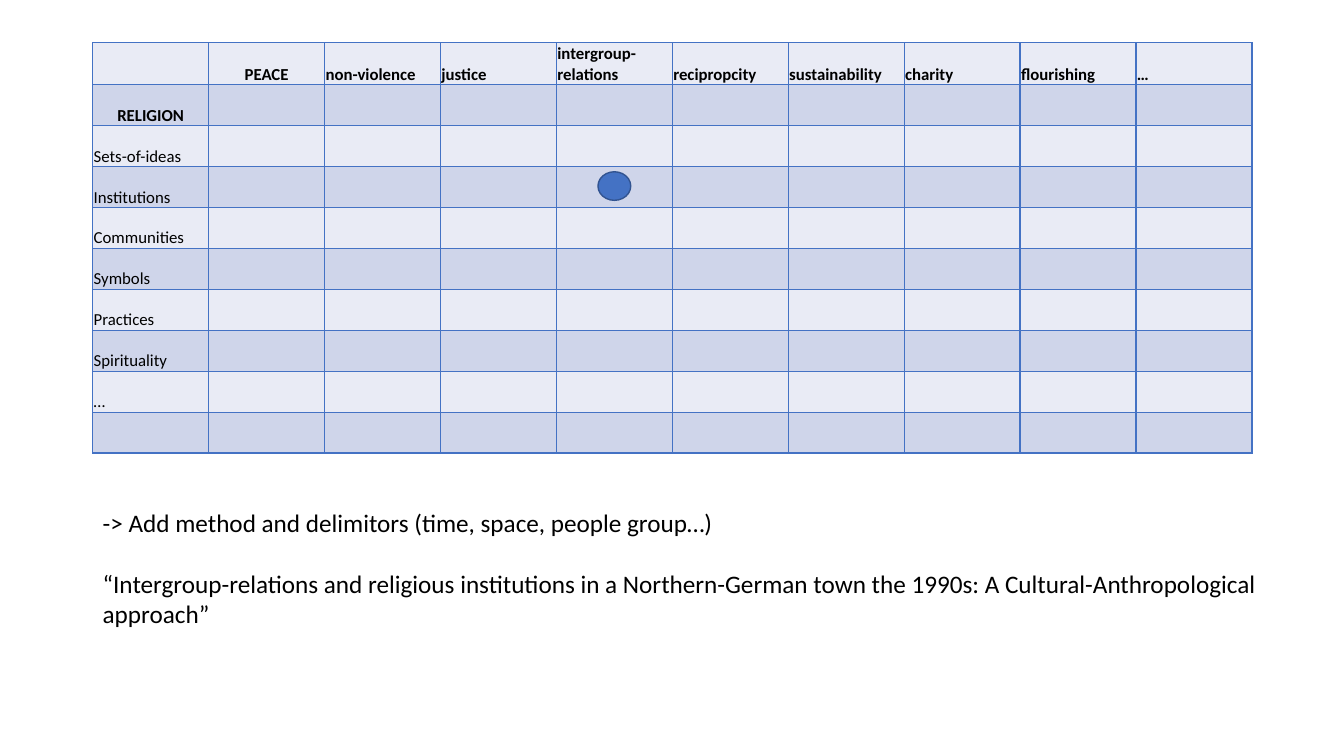
import pptx
import pptx.util
import pptx.dml.color
import pptx.enum.shapes
import pptx.enum.text
import pptx.oxml

Pt = pptx.util.Pt
Align = pptx.enum.text.PP_ALIGN

themes = ["PEACE", "non-violence", "justice", "intergroup-relations", "recipropcity",
          "sustainability", "charity", "flourishing", "…"]
facets = ["RELIGION", "Sets-of-ideas", "Institutions", "Communities", "Symbols",
          "Practices", "Spirituality", "…", ""]
titles = ("PEACE", "RELIGION")
notes = [
    ("-> Add method and delimitors (time, space, people group…)", 0),
    ("“Intergroup-relations and religious institutions in a Northern-German town "
     "the 1990s: A Cultural-Anthropological approach”", 22),
]
colors = {"pale": "E9EBF5", "band": "CFD5EA", "blue": "4472C4", "edge": "325491", "ink": "000000"}
font = "Calibri"
left, top, wide, high = 66.24, 30.6, 82.8, 29.23
mark = (3, 4)
dot_w, dot_h = 23.4, 20.4


def rgb(name):
    return pptx.dml.color.RGBColor.from_string(colors[name])


def write(para, text, size, bold=False):
    run = para.add_run()
    run.text = text
    run.font.name = font
    run.font.size = Pt(size)
    run.font.bold = bold
    run.font.color.rgb = rgb("ink")


def border(cell):
    props = cell._tc.get_or_add_tcPr()
    for side in "LRTB":
        props.append(pptx.oxml.parse_xml(
            f'<a:ln{side} xmlns:a="http://schemas.openxmlformats.org/drawingml/2006/main" w="12700">'
            f'<a:solidFill><a:srgbClr val="{colors["blue"]}"/></a:solidFill></a:ln{side}>'))


def fill_cell(cell, text, row):
    border(cell)
    cell.fill.solid()
    cell.fill.fore_color.rgb = rgb("band" if row % 2 else "pale")
    cell.margin_left = cell.margin_right = cell.margin_top = Pt(0.7)
    cell.margin_bottom = Pt(0)
    cell.vertical_anchor = pptx.enum.text.MSO_ANCHOR.BOTTOM
    para = cell.text_frame.paragraphs[0]
    if text:
        para.alignment = Align.CENTER if text in titles else Align.LEFT
        write(para, text, 12, row < 2)


def add_grid(slide):
    grid = [[""] + themes] + [[facet] + [""] * len(themes) for facet in facets]
    rows, cols = len(grid), len(grid[0])
    table = slide.shapes.add_table(rows, cols, Pt(left), Pt(top),
                                   Pt(cols * wide), Pt(rows * high)).table
    table.first_row = table.horz_banding = False
    for col in table.columns:
        col.width = Pt(wide)
    for r, line in enumerate(grid):
        table.rows[r].height = Pt(high)
        for c, text in enumerate(line):
            fill_cell(table.cell(r, c), text, r)


def add_dot(slide):
    row, col = mark
    x = left + (col + 0.5) * wide - dot_w / 2
    y = top + (row + 0.5) * high - dot_h / 2
    dot = slide.shapes.add_shape(pptx.enum.shapes.MSO_SHAPE.OVAL,
                                 Pt(x), Pt(y), Pt(dot_w), Pt(dot_h))
    dot.shadow.inherit = False
    dot.fill.solid()
    dot.fill.fore_color.rgb = rgb("blue")
    dot.line.color.rgb = rgb("edge")
    dot.line.width = Pt(1)


def add_notes(slide):
    frame = slide.shapes.add_textbox(Pt(left), Pt(358.6), Pt(838.8), Pt(94.3)).text_frame
    frame.word_wrap = True
    frame.auto_size = pptx.enum.text.MSO_AUTO_SIZE.SHAPE_TO_FIT_TEXT
    for i, (text, gap) in enumerate(notes):
        para = frame.add_paragraph() if i else frame.paragraphs[0]
        para.space_before = Pt(gap)
        write(para, text, 18)


def main():
    deck = pptx.Presentation()
    deck.slide_width, deck.slide_height = Pt(960), Pt(540)
    slide = deck.slides.add_slide(deck.slide_layouts[6])
    add_grid(slide)
    add_dot(slide)
    add_notes(slide)
    deck.save("out.pptx")


if __name__ == "__main__":
    main()
